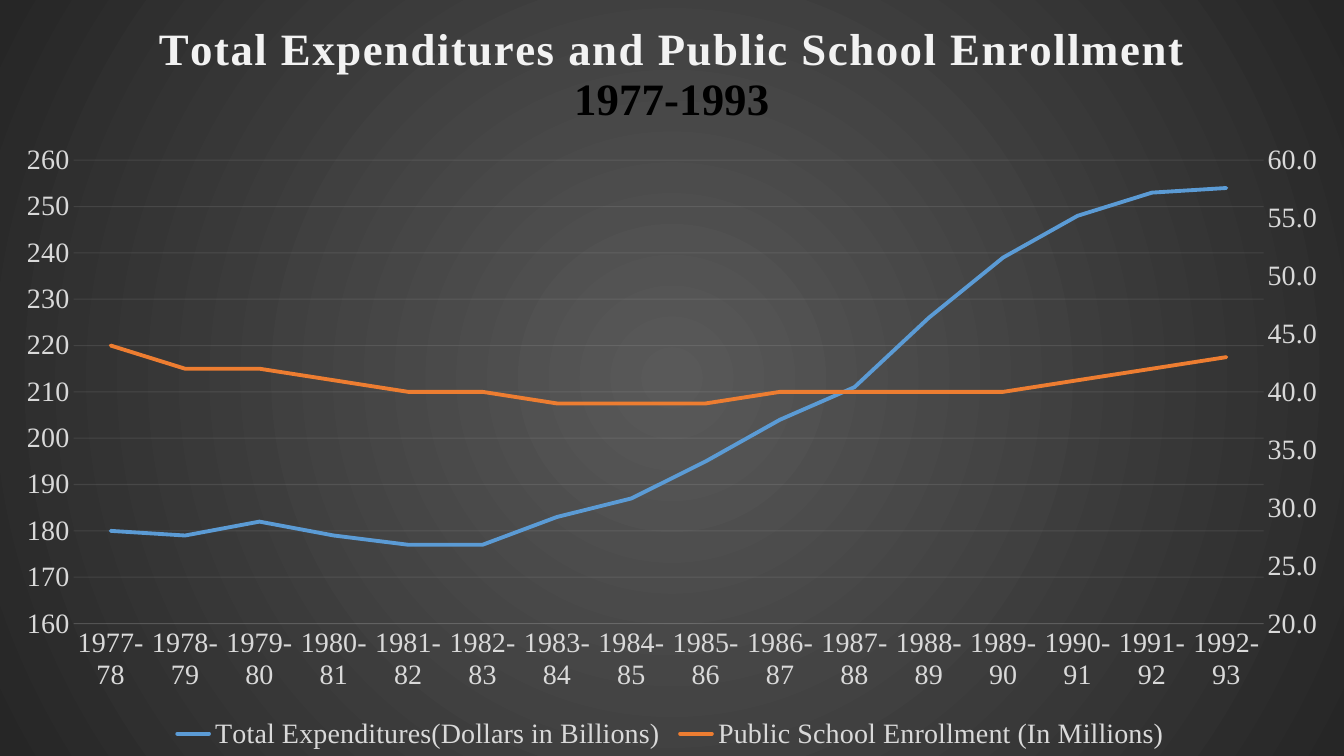
import copy

from lxml import etree
from pptx import Presentation
from pptx import util as u
from pptx.chart.axis import ValueAxis
from pptx.chart.data import CategoryChartData
from pptx.dml.color import RGBColor
from pptx.enum import chart as c
from pptx.oxml import parse_xml
from pptx.oxml.ns import nsdecls, qn

WIDTH, HEIGHT = u.Inches(13.33), u.Inches(7.5)
SERIF = "Times New Roman"
BLACK = RGBColor(0x00, 0x00, 0x00)
WHITE = RGBColor(0xF2, 0xF2, 0xF2)
LABEL_GREY = RGBColor(0xD9, 0xD9, 0xD9)
BLUE = RGBColor(0x5B, 0x9B, 0xD5)
ORANGE = RGBColor(0xED, 0x7D, 0x31)
CENTRE_GREY = RGBColor(0x59, 0x59, 0x59)
EDGE_GREY = RGBColor(0x26, 0x26, 0x26)

YEARS = [f"{year}-{year % 100 + 1}" for year in range(1977, 1993)]
EXPENDITURES = (180, 179, 182, 179, 177, 177, 183, 187,
                195, 204, 211, 226, 239, 248, 253, 254)
ENROLLMENT = (44, 42, 42, 41, 40, 40, 39, 39,
              39, 40, 40, 40, 40, 41, 42, 43)


def format_font(font, size=20, color=LABEL_GREY, bold=False):
    font.name, font.size, font.bold = SERIF, u.Pt(size), bold
    font.color.rgb = color


def write_text(paragraph, words, spacing=0, **font_format):
    run = paragraph.add_run()
    run.text = words
    format_font(run.font, **font_format)
    run.font._element.set("spc", str(spacing))


def place(parent, before, left, top, width=None, height=None):
    """Set a manual layout, in percent of the chart, ahead of the child named before."""
    for old in parent.findall(qn("c:layout")):
        parent.remove(old)
    layout = etree.Element(qn("c:layout"))
    manual = etree.SubElement(layout, qn("c:manualLayout"))
    if before == "c:lineChart":
        etree.SubElement(manual, qn("c:layoutTarget")).set("val", "inner")
    for mode in ("xMode", "yMode"):
        etree.SubElement(manual, qn(f"c:{mode}")).set("val", "edge")
    for name, percent in zip("xywh", (left, top, width, height)):
        if percent is not None:
            etree.SubElement(manual, qn(f"c:{name}")).set("val", f"{percent / 100:.4f}")
    parent.find(qn(before)).addprevious(layout)


def format_faint_line(line):
    line.color.rgb, line.width = WHITE, u.Pt(0.75)
    color = line._get_or_add_ln().find(".//" + qn("a:srgbClr"))
    etree.SubElement(color, qn("a:alpha")).set("val", "10000")


def format_series(series, color):
    series.smooth = False
    line = series.format.line
    line.color.rgb, line.width = color, u.Pt(2.75)
    line._get_or_add_ln().set("cap", "rnd")


def format_axis(axis):
    axis.major_tick_mark = axis.minor_tick_mark = c.XL_TICK_MARK.NONE
    format_font(axis.tick_labels.font)


def scale_axis(axis, low, high, step, number_format):
    axis.minimum_scale, axis.maximum_scale, axis.major_unit = low, high, step
    axis.tick_labels.number_format = number_format
    axis.tick_labels.number_format_is_linked = False


def move_last_series_right(chart):
    """Draw the last series against a second value axis on the right."""
    plot_area = chart._chartSpace.chart.plotArea
    left_plot = plot_area.find(qn("c:lineChart"))
    right_plot = copy.deepcopy(left_plot)
    left_plot.remove(left_plot.findall(qn("c:ser"))[-1])
    right_plot.remove(right_plot.find(qn("c:ser")))
    left_plot.addnext(right_plot)

    categories = copy.deepcopy(chart.category_axis._element)
    values = copy.deepcopy(chart.value_axis._element)
    chart.value_axis._element.addnext(values)
    values.addnext(categories)
    new_ids = {axis.find(qn("c:axId")).get("val"): number
               for axis, number in ((categories, "5001"), (values, "5002"))}
    for part in (right_plot, categories, values):
        for reference in part.findall(qn("c:axId")) + part.findall(qn("c:crossAx")):
            reference.set("val", new_ids[reference.get("val")])
    categories.find(qn("c:delete")).set("val", "1")
    values.find(qn("c:axPos")).set("val", "r")
    values.find(qn("c:crosses")).set("val", "max")
    axis = ValueAxis(values)
    axis.has_major_gridlines = False
    return axis


def fill_background(chart):
    stops = "".join(f'<a:gs pos="{position}"><a:srgbClr val="{color}"/></a:gs>'
                    for position, color in ((0, CENTRE_GREY), (100000, EDGE_GREY)))
    chart._chartSpace.chart.addnext(parse_xml(
        f'<c:spPr {nsdecls("c", "a")}><a:gradFill><a:gsLst>{stops}</a:gsLst>'
        '<a:path path="circle"><a:fillToRect l="50000" t="50000" r="50000" b="50000"/>'
        '</a:path></a:gradFill><a:ln><a:noFill/></a:ln></c:spPr>'))


def add_title(chart):
    title = chart.chart_title
    frame = title.text_frame
    write_text(frame.paragraphs[0], "Total Expenditures and Public School Enrollment",
               spacing=100, size=32, color=WHITE, bold=True)
    write_text(frame.add_paragraph(), "1977-1993", size=32, color=BLACK, bold=True)
    place(title._element, "c:overlay", 11.59, 2.74)


def add_legend(chart):
    chart.has_legend = True
    legend = chart.legend
    legend.position = c.XL_LEGEND_POSITION.BOTTOM
    legend.include_in_layout = False
    format_font(legend.font)
    place(legend._element, "c:overlay", 12.4, 94.3, 75, 5.5)


def add_line_chart(slide):
    data = CategoryChartData()
    data.categories = YEARS
    data.add_series("Total Expenditures(Dollars in Billions)", EXPENDITURES, "0")
    data.add_series("Public School Enrollment (In Millions)", ENROLLMENT, "0.0")
    chart = slide.shapes.add_chart(c.XL_CHART_TYPE.LINE, 0, 0, WIDTH, HEIGHT, data).chart
    format_font(chart.font)
    chart.plots[0].vary_by_categories = False
    for series, color in zip(chart.plots[0].series, (BLUE, ORANGE)):
        format_series(series, color)

    format_axis(chart.category_axis)
    format_faint_line(chart.category_axis.format.line)
    format_axis(chart.value_axis)
    chart.value_axis.format.line.fill.background()
    chart.value_axis.has_major_gridlines = True
    format_faint_line(chart.value_axis.major_gridlines.format.line)
    scale_axis(chart.value_axis, 160, 260, 10, "0")
    scale_axis(move_last_series_right(chart), 20, 60, 5, "0.0")

    place(chart._chartSpace.chart.plotArea, "c:lineChart", 5.47, 21.2, 88.55, 61.3)
    add_title(chart)
    add_legend(chart)
    fill_background(chart)


def main():
    presentation = Presentation()
    presentation.slide_width, presentation.slide_height = WIDTH, HEIGHT
    add_line_chart(presentation.slides.add_slide(presentation.slide_layouts[6]))
    presentation.save("out.pptx")


if __name__ == "__main__":
    main()
